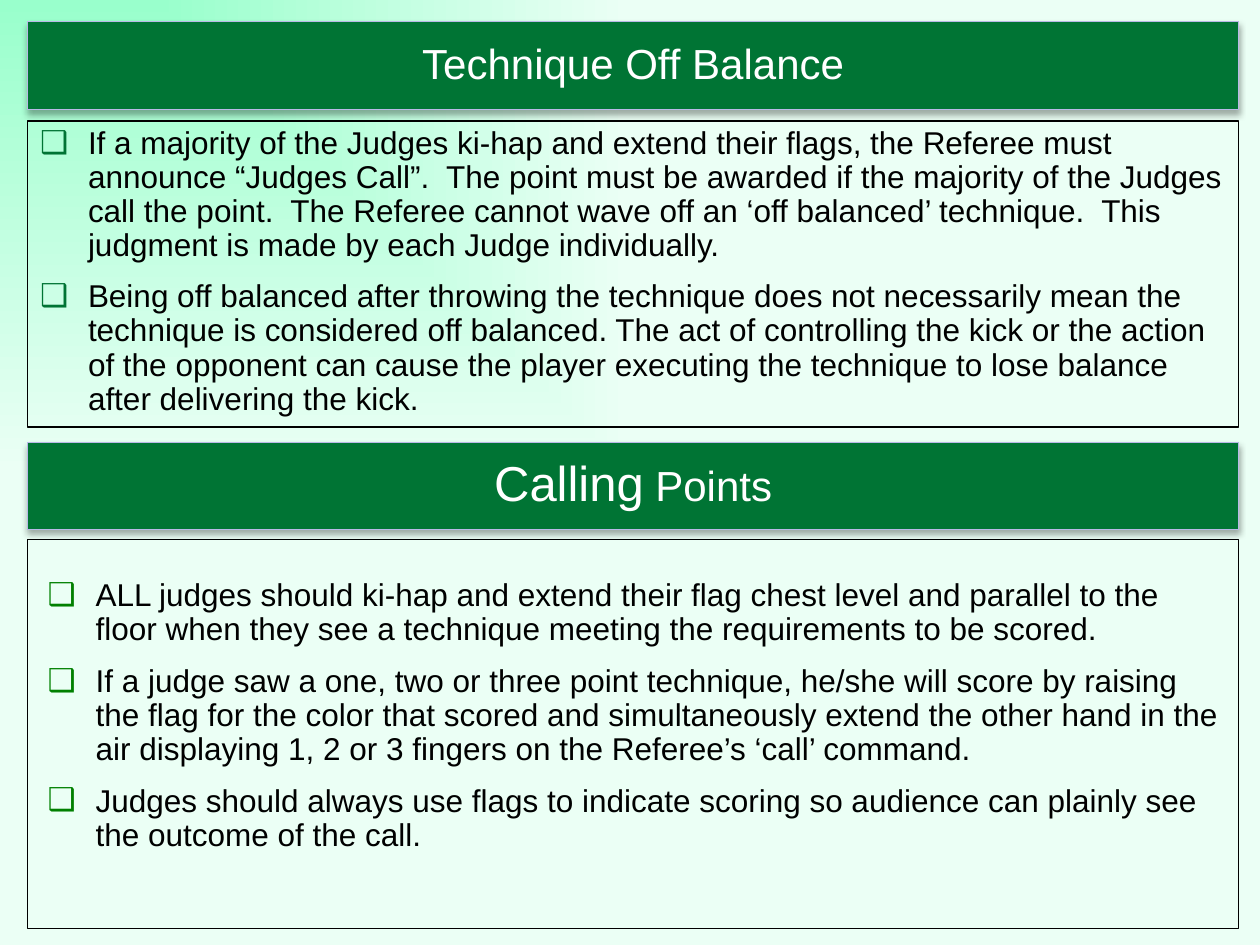
from lxml.etree import SubElement
from pptx import Presentation
from pptx.dml.color import RGBColor
from pptx.enum.shapes import MSO_SHAPE
from pptx.enum.text import MSO_ANCHOR, MSO_AUTO_SIZE, PP_ALIGN
from pptx.oxml import parse_xml
from pptx.oxml.ns import nsdecls, qn
from pptx.util import Inches, Pt

FONT = "Arial"
GREEN = "007434"
LEFT, WIDTH = 0.22, 9.61

SECTIONS = [
    {
        "heading": [("Technique Off Balance", 24)],
        "band": (0.17, 0.7),
        "panel": (0.96, 2.43),
        "inset": 0.05,
        "indent": 0.38,
        "bullet": GREEN,
        "points": [
            "If a majority of the Judges ki-hap and extend their flags, the Referee must announce “Judges Call”.  The point must be awarded if the majority of the Judges call the point.  The Referee cannot wave off an ‘off balanced’ technique.  This judgment is made by each Judge individually.",
            "Being off balanced after throwing the technique does not necessarily mean the technique is considered off balanced. The act of controlling the kick or the action of the opponent can cause the player executing the technique to lose balance after delivering the kick.",
        ],
    },
    {
        "heading": [("Calling", 28), (" Points", 24)],
        "band": (3.51, 0.69),
        "panel": (4.28, 3.09),
        "inset": 0.32,
        "indent": 0.44,
        "bullet": "008000",
        "points": [
            "ALL judges should ki-hap and extend their flag chest level and parallel to the floor when they see a technique meeting the requirements to be scored.",
            "If a judge saw a one, two or three point technique, he/she will score by raising the flag for the color that scored and simultaneously extend the other hand in the air displaying 1, 2 or 3 fingers on the Referee’s ‘call’ command.",
            "Judges should always use flags to indicate scoring so audience can plainly see the outcome of the call.",
        ],
    },
]


def color(value):
    return RGBColor.from_string(value)


def set_background(slide):
    slide.background.fill.solid()
    properties = slide.element.find(".//" + qn("p:bgPr"))
    properties.replace(properties[0], parse_xml(
        f'<a:gradFill {nsdecls("a")} rotWithShape="0"><a:gsLst>'
        '<a:gs pos="0"><a:srgbClr val="99FFCC"/></a:gs>'
        '<a:gs pos="100000"><a:srgbClr val="EBFFF5"/></a:gs></a:gsLst>'
        '<a:path path="rect"><a:fillToRect r="100000" b="100000"/></a:path></a:gradFill>'))


def add_rectangle(slide):
    return slide.shapes.add_shape(MSO_SHAPE.RECTANGLE, 0, 0, 0, 0)


def format_box(shape, span, line, anchor, fill=None):
    top, height = span
    shape.left, shape.top = Inches(LEFT), Inches(top)
    shape.width, shape.height = Inches(WIDTH), Inches(height)
    if fill:
        shape.fill.solid()
        shape.fill.fore_color.rgb = color(fill)
    else:
        shape.fill.background()
    shape.line.color.rgb = color(line)
    shape.line.width = Pt(0.75)
    shape.shadow.inherit = False
    frame = shape.text_frame
    frame.word_wrap = True
    frame.auto_size = MSO_AUTO_SIZE.NONE
    frame.vertical_anchor = anchor
    return frame


def add_run(paragraph, text, size, text_color):
    run = paragraph.add_run()
    run.text = text
    run.font.name = FONT
    run.font.size = Pt(size)
    run.font.color.rgb = color(text_color)


def add_shadow(shape):
    effects = shape.element.spPr.find(qn("a:effectLst"))
    shadow = SubElement(effects, qn("a:outerShdw"), blurRad=str(Pt(3.5)),
                        dist=str(Pt(2.2)), dir="5400000", rotWithShape="0")
    tint = SubElement(shadow, qn("a:srgbClr"), val="000000")
    SubElement(tint, qn("a:alpha"), val="32000")


def fill_band(shape, section):
    frame = format_box(shape, section["band"], "B9B9E7", MSO_ANCHOR.MIDDLE, GREEN)
    add_shadow(shape)
    paragraph = frame.paragraphs[0]
    paragraph.alignment = PP_ALIGN.CENTER
    paragraph.line_spacing = 0.9
    for text, size in section["heading"]:
        add_run(paragraph, text, size, "FFFFFF")


def add_bullet(paragraph, indent, bullet_color):
    properties = paragraph._p.get_or_add_pPr()
    properties.set("marL", str(Inches(indent)))
    properties.set("indent", str(Inches(-0.38)))
    tint = SubElement(properties, qn("a:buClr"))
    SubElement(tint, qn("a:srgbClr"), val=bullet_color)
    SubElement(properties, qn("a:buFont"), typeface=FONT)
    SubElement(properties, qn("a:buChar"), char="❑")


def fill_panel(shape, section):
    frame = format_box(shape, section["panel"], "000000", MSO_ANCHOR.TOP)
    frame.margin_top = Inches(section["inset"])
    for index, text in enumerate(section["points"]):
        paragraph = frame.add_paragraph() if index else frame.paragraphs[0]
        add_bullet(paragraph, section["indent"], section["bullet"])
        paragraph.alignment = PP_ALIGN.LEFT
        paragraph.line_spacing = 0.9
        paragraph.space_after = Pt(10)
        add_run(paragraph, text, 18, "000000")


def main():
    presentation = Presentation()
    presentation.slide_width, presentation.slide_height = Inches(10), Inches(7.5)
    slide = presentation.slides.add_slide(presentation.slide_layouts[5])
    set_background(slide)
    for index, section in enumerate(SECTIONS):
        fill_panel(add_rectangle(slide), section)
        fill_band(add_rectangle(slide) if index else slide.shapes.title, section)
    presentation.save("out.pptx")


if __name__ == "__main__":
    main()
